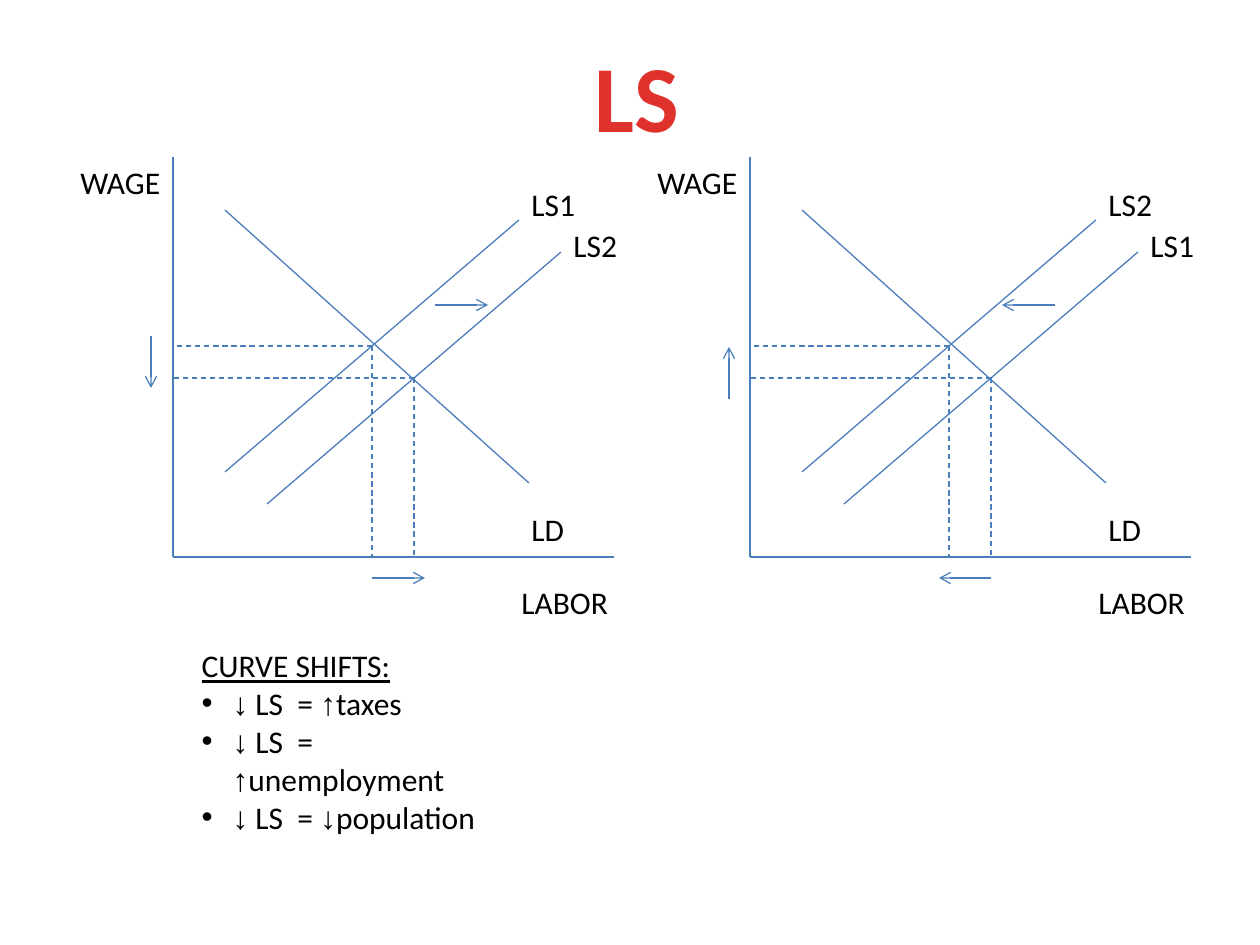
from dataclasses import dataclass

from pptx import Presentation
from pptx.dml.color import RGBColor as RGB
from pptx.enum.dml import MSO_LINE_DASH_STYLE as Dash
from pptx.enum.shapes import MSO_CONNECTOR as Connector
from pptx.enum.text import MSO_ANCHOR as Anchor
from pptx.enum.text import MSO_AUTO_SIZE as AutoSize
from pptx.enum.text import PP_ALIGN as Align
from pptx.oxml.ns import qn
from pptx.util import Emu, Pt
from lxml.etree import SubElement


@dataclass(frozen=True)
class Theme:
    line: RGB = RGB(0x4B, 0x7E, 0xBC)
    text: RGB = RGB(0, 0, 0)
    title_light: RGB = RGB(0xE0, 0x32, 0x2D)
    title_dark: RGB = RGB(0xA2, 0x20, 0x1C)
    font: str = "Calibri"
    symbol_font: str = "Arial"
    title_size: int = 54
    text_size: int = 18
    line_width: float = 0.75


THEME = Theme()
PX_PER_INCH = 126


def px(value):
    return Emu(round(value * 914400 / PX_PER_INCH))


def write_text(paragraph, text, font=THEME.font, size=THEME.text_size,
               color=THEME.text, bold=False, underline=False):
    run = paragraph.add_run()
    run.text = text
    run.font.name = font
    run.font.size = Pt(size)
    run.font.bold = bold
    run.font.underline = underline
    run.font.color.rgb = color
    return run


def place(shape, left, top, width, height):
    shape.left, shape.top = px(left), px(top)
    shape.width, shape.height = px(width), px(height)
    shape.text_frame.word_wrap = False
    shape.text_frame.auto_size = AutoSize.SHAPE_TO_FIT_TEXT


def add_label(slide, text, left, top, width):
    height = 50
    label = slide.shapes.add_textbox(px(left), px(top), px(width), px(height))
    place(label, left, top, width, height)
    write_text(label.text_frame.paragraphs[0], text)


def add_line(slide, start, end, dashed=False, arrow=False):
    connector = slide.shapes.add_connector(
        Connector.STRAIGHT, *(px(value) for value in (*start, *end)))
    connector.line.color.rgb = THEME.line
    connector.line.width = Pt(THEME.line_width)
    if dashed:
        connector.line.dash_style = Dash.DASH
    properties = connector._element.spPr
    if arrow:
        SubElement(properties.find(qn("a:ln")), qn("a:tailEnd"), type="arrow")
    SubElement(properties, qn("a:effectLst"))


def add_title(slide, left, top, width, height):
    title = slide.shapes.title
    place(title, left, top, width, height)
    title.text_frame.vertical_anchor = Anchor.TOP
    paragraph = title.text_frame.paragraphs[0]
    paragraph.alignment = Align.CENTER
    run = write_text(paragraph, "LS", size=THEME.title_size, bold=True)
    run._r.get_or_add_rPr().set("spc", "50")
    fill = run.font.fill
    fill.gradient()
    fill.gradient_angle = 270
    colors = (THEME.title_light, THEME.title_dark)
    for stop, color, position in zip(fill.gradient_stops, colors, (0.25, 1)):
        stop.color.rgb = color
        stop.position = position


def add_market(slide, left, top, upper_name, lower_name, arrows):
    """Labor market diagram; arrows are (start, end) pairs within its box."""
    def at(x, y):
        return left + x, top + y

    axis_x, axis_y = 105, 400

    # Axes
    add_line(slide, at(axis_x, 0), at(axis_x, axis_y))
    add_line(slide, at(axis_x, axis_y), at(546, axis_y))

    # Demand curve and the two supply curves
    for start, end in (((157, 53), (461, 326)),
                       ((157, 315), (451, 63)),
                       ((199, 347), (493, 95))):
        add_line(slide, at(*start), at(*end))

    # Guides from each equilibrium to both axes
    for x, y in ((304, 189), (346, 221)):
        add_line(slide, at(x, y), at(axis_x, y), dashed=True)
        add_line(slide, at(x, y), at(x, axis_y), dashed=True)

    # Directions of change
    for start, end in arrows:
        add_line(slide, at(*start), at(*end), arrow=True)

    # Labels
    for text, x, y, width in (("WAGE", 0, 0, 106),
                              (upper_name, 451, 22, 69),
                              (lower_name, 493, 63, 69),
                              ("LD", 451, 347, 59),
                              ("LABOR", 441, 420, 112)):
        add_label(slide, text, *at(x, y), width)


def format_list_paragraph(paragraph, bullet=None):
    indent = px(31) if bullet else 0
    paragraph.space_before = Pt(0)
    properties = paragraph._p.get_or_add_pPr()
    properties.set("marL", str(indent))
    properties.set("indent", str(-indent))
    if bullet:
        SubElement(properties, qn("a:buFont"), typeface=THEME.symbol_font)
        SubElement(properties, qn("a:buChar"), char=bullet)
    else:
        SubElement(properties, qn("a:buNone"))


def add_curve_shifts(slide, left, top, width, height):
    body = slide.placeholders[1]
    place(body, left, top, width, height)
    frame = body.text_frame
    heading = frame.paragraphs[0]
    format_list_paragraph(heading)
    write_text(heading, "CURVE SHIFTS:", underline=True)
    for arrow, cause in (("↑", "taxes"), ("↑", "unemployment"),
                         ("↓", "population")):
        paragraph = frame.add_paragraph()
        format_list_paragraph(paragraph, bullet="•")
        write_text(paragraph, "↓", font=THEME.symbol_font)
        write_text(paragraph, " LS  = ")
        write_text(paragraph, arrow, font=THEME.symbol_font)
        write_text(paragraph, cause)


def main():
    presentation = Presentation()
    presentation.slide_width = px(1260)
    presentation.slide_height = px(945)
    slide = presentation.slides.add_slide(presentation.slide_layouts[1])

    add_title(slide, 581, 32, 112, 127)
    # Supply increases: wage falls, labor rises
    add_market(slide, 68, 157, "LS1", "LS2", arrows=(
        ((83, 179), (83, 231)),
        ((304, 421), (357, 421)),
        ((367, 148), (420, 148))))
    # Supply decreases: wage rises, labor falls
    add_market(slide, 645, 157, "LS2", "LS1", arrows=(
        ((84, 242), (84, 190)),
        ((346, 421), (294, 421)),
        ((410, 148), (357, 148))))
    add_curve_shifts(slide, 189, 640, 354, 165)

    presentation.save("out.pptx")


if __name__ == "__main__":
    main()
